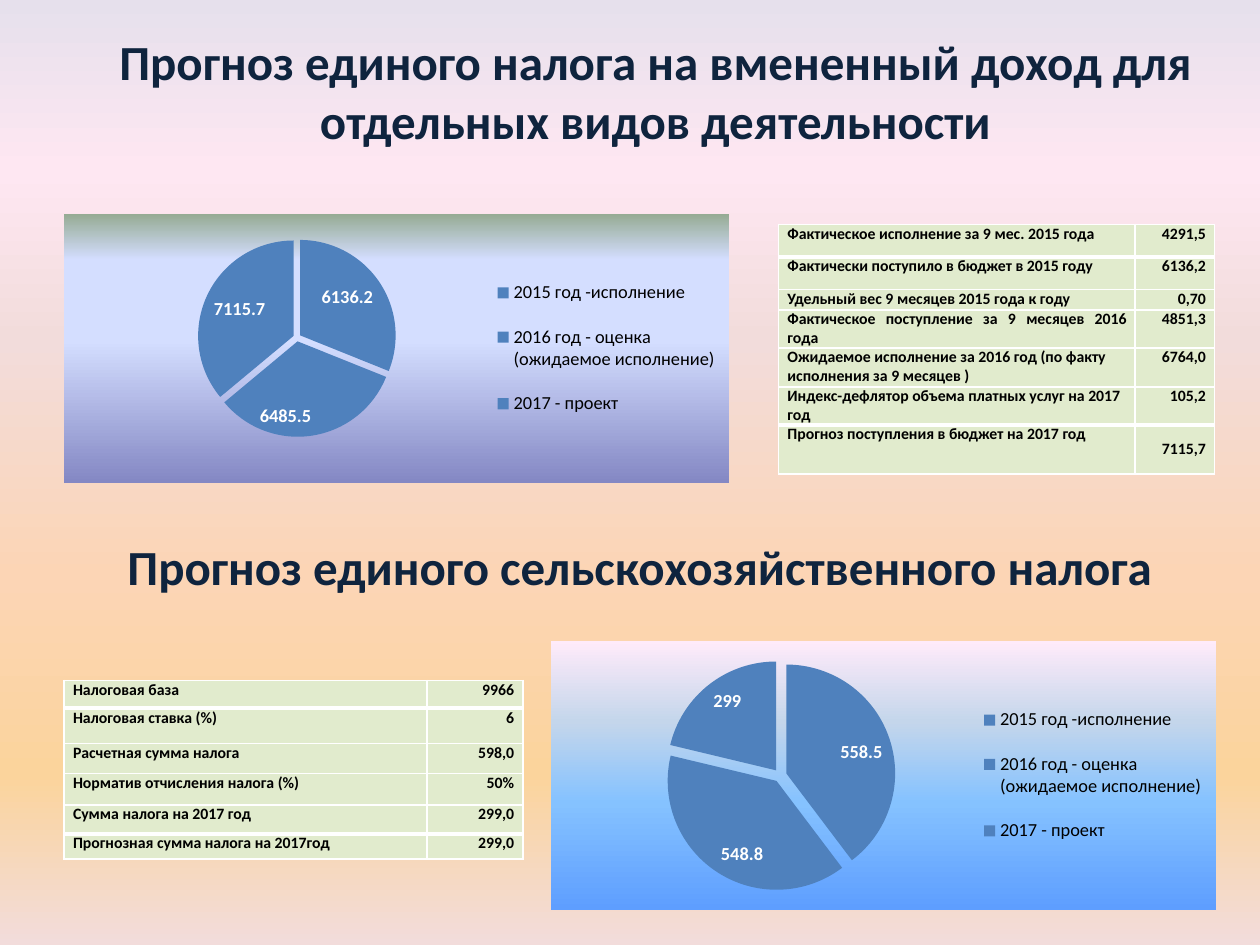
from dataclasses import dataclass

from pptx import Presentation, util as u
from pptx.chart import data
from pptx.dml.color import RGBColor
from pptx.enum import chart as charts, text
from pptx.oxml import ns, parse_xml


@dataclass(frozen=True)
class Theme:
    font: str = "Calibri"
    heading: str = "0F243E"
    ink: str = "000000"
    light: str = "FFFFFF"
    cell: str = "E1EBCD"
    slice: str = "C0504D"
    heading_size: float = 28
    chart_size: float = 10.5
    table_size: float = 9
    thin: float = 1
    thick: float = 3
    background: tuple = ((0, "E6E0EC"), (18, "FEE7F2"), (36, "F2DCDB"),
                         (61, "FCD5B5"), (82, "FBD49C"), (100, "F2DCDB"))
    violet: tuple = ((0, "8488C4"), (53, "D4DEFF"), (83, "D4DEFF"), (100, "96AB94"))
    blue: tuple = ((0, "5E9EFF"), (40, "85C2FF"), (70, "C4D6EB"), (100, "FFEBFA"))


def gradient(stops, angle):
    marks = "".join(f'<a:gs pos="{position * 1000}"><a:srgbClr val="{color}"/></a:gs>'
                    for position, color in stops)
    return (f'<a:gradFill {ns.nsdecls("a")} rotWithShape="1"><a:gsLst>{marks}</a:gsLst>'
            f'<a:lin ang="{angle * 60000}" scaled="0"/></a:gradFill>')


def manual_layout(left, top, width, height, inner=False):
    target = '<c:layoutTarget val="inner"/>' if inner else ""
    sizes = "".join(f'<c:{name} val="{value}"/>' for name, value in
                    zip("xywh", (left, top, width, height)))
    return parse_xml(f'<c:layout {ns.nsdecls("c")}><c:manualLayout>{target}'
                     f'<c:xMode val="edge"/><c:yMode val="edge"/>{sizes}'
                     '</c:manualLayout></c:layout>')


class SlideBuilder:
    """Adds styled elements to the current slide."""

    def __init__(self, slide, theme):
        self.slide = slide
        self.theme = theme

    def style(self, font, size, color, bold=False):
        font.name = self.theme.font
        font.size = u.Pt(size)
        font.bold = bold
        font.color.rgb = RGBColor.from_string(color)

    def background(self):
        self.slide.background.fill.solid()
        solid = next(self.slide._element.iter(ns.qn("a:solidFill")))
        solid.getparent().replace(solid, parse_xml(gradient(self.theme.background, 90)))

    def heading(self, wording, box):
        shape = self.slide.shapes.add_textbox(*map(u.Inches, box))
        frame = shape.text_frame
        frame.word_wrap = True
        frame.vertical_anchor = text.MSO_ANCHOR.MIDDLE
        frame.text = wording
        paragraph = frame.paragraphs[0]
        paragraph.alignment = text.PP_ALIGN.CENTER
        self.style(paragraph.runs[0].font, self.theme.heading_size, self.theme.heading, True)

    def pie(self, values, box, stops, plot, explosion):
        chart_data = data.CategoryChartData()
        chart_data.categories = ["2015 год -исполнение",
                                 "2016 год - оценка (ожидаемое исполнение)",
                                 "2017 - проект"]
        chart_data.add_series("Series 1", values)
        chart = self.slide.shapes.add_chart(charts.XL_CHART_TYPE.PIE,
                                            *map(u.Inches, box), chart_data).chart
        chart.has_title = False
        self.style(chart.font, self.theme.chart_size, self.theme.ink)
        space = chart._chartSpace
        space.find(ns.qn("c:chart")).addnext(parse_xml(
            f'<c:spPr {ns.nsdecls("c", "a")}>{gradient(stops, 270)}'
            '<a:ln><a:noFill/></a:ln></c:spPr>'))

        pie = chart.plots[0]
        pie.vary_by_categories = False
        series = pie.series[0]
        series.format.fill.solid()
        series.format.fill.fore_color.rgb = RGBColor.from_string(self.theme.slice)
        series._element.find(ns.qn("c:spPr")).addnext(
            parse_xml(f'<c:explosion {ns.nsdecls("c")} val="{explosion}"/>'))
        pie.has_data_labels = True
        labels = pie.data_labels
        labels.show_value = True
        labels.show_percentage = False
        labels.position = charts.XL_LABEL_POSITION.INSIDE_END
        self.style(labels.font, self.theme.chart_size, self.theme.light, True)

        chart.has_legend = True
        legend = chart.legend
        legend.position = charts.XL_LEGEND_POSITION.RIGHT
        legend.include_in_layout = False
        self.style(legend.font, self.theme.chart_size, self.theme.ink)
        plot_area = next(space.iter(ns.qn("c:plotArea")))
        for parent in (plot_area, legend._element):
            for old in parent.findall(ns.qn("c:layout")):
                parent.remove(old)
        plot_area.insert(0, manual_layout(*plot, inner=True))
        legend._element.find(ns.qn("c:legendPos")).addnext(
            manual_layout(0.65, 0.17, 0.33, 0.66))

    def borders(self, cell, top, bottom):
        properties = cell._tc.get_or_add_tcPr()
        widths = {"L": self.theme.thin, "R": self.theme.thin, "T": top, "B": bottom}
        for index, (side, width) in enumerate(widths.items()):
            properties.insert(index, parse_xml(
                f'<a:ln{side} {ns.nsdecls("a")} w="{u.Pt(width)}"><a:solidFill>'
                f'<a:srgbClr val="{self.theme.light}"/></a:solidFill></a:ln{side}>'))

    def table(self, rows, heights, widths, corner, justified):
        box = (*corner, sum(widths), sum(heights))
        table = self.slide.shapes.add_table(len(rows), len(widths),
                                            *map(u.Inches, box)).table
        table.first_row = table.horz_banding = False
        for column, width in zip(table.columns, widths):
            column.width = u.Inches(width)
        thick_lines = (1, len(rows) - 1)
        edges = [self.theme.thick if line in thick_lines else self.theme.thin
                 for line in range(len(rows) + 1)]
        for index, (row, height) in enumerate(zip(rows, heights)):
            table.rows[index].height = u.Inches(height)
            label = text.PP_ALIGN.JUSTIFY if index in justified else text.PP_ALIGN.LEFT
            for column, alignment in enumerate((label, text.PP_ALIGN.RIGHT)):
                cell = table.cell(index, column)
                cell.margin_left = cell.margin_right = u.Inches(0.07)
                cell.margin_top = cell.margin_bottom = 0
                cell.fill.solid()
                cell.fill.fore_color.rgb = RGBColor.from_string(self.theme.cell)
                cell.text_frame.text = row[column]
                paragraph = cell.text_frame.paragraphs[0]
                paragraph.alignment = alignment
                self.style(paragraph.runs[0].font, self.theme.table_size,
                           self.theme.ink, True)
                self.borders(cell, edges[index], edges[index + 1])
        return table


def main():
    theme = Theme()
    presentation = Presentation()
    presentation.slide_width, presentation.slide_height = u.Inches(10), u.Inches(7.5)
    builder = SlideBuilder(presentation.slides.add_slide(presentation.slide_layouts[6]), theme)
    builder.background()

    builder.heading("Прогноз единого налога на вмененный доход для отдельных видов деятельности",
                    (0.71, 0.21, 8.98, 1.02))
    builder.pie((6136.2, 6485.5, 7115.7), (0.51, 1.7, 5.28, 2.13), theme.violet,
                (0.2, 0.09, 0.3, 0.74), 4)
    imputed_income = builder.table([
        ("Фактическое исполнение за 9 мес. 2015 года", "4291,5"),
        ("Фактически поступило в бюджет в 2015 году", "6136,2"),
        ("Удельный вес 9 месяцев 2015 года к году", "0,70"),
        ("Фактическое поступление за 9 месяцев 2016 года", "4851,3"),
        ("Ожидаемое исполнение за 2016 год (по факту исполнения за 9 месяцев )", "6764,0"),
        ("Индекс-дефлятор объема платных услуг на 2017 год", "105,2"),
        ("Прогноз поступления в бюджет на 2017 год", "7115,7"),
    ], (0.26, 0.26, 0.16, 0.26, 0.31, 0.26, 0.39), (2.83, 0.63), (6.18, 1.78), (0, 1, 3))
    imputed_income.cell(6, 1).vertical_anchor = text.MSO_ANCHOR.MIDDLE

    builder.heading("Прогноз единого сельскохозяйственного налога", (0.51, 4.22, 9.13, 0.55))
    builder.table([
        ("Налоговая база", "9966"),
        ("Налоговая ставка (%)", "6"),
        ("Расчетная сумма налога", "598,0"),
        ("Норматив отчисления налога (%)", "50%"),
        ("Сумма налога на 2017 год", "299,0"),
        ("Прогнозная сумма налога на 2017год", "299,0"),
    ], (0.22, 0.28, 0.24, 0.25, 0.23, 0.2), (2.88, 0.76), (0.51, 5.4), (0, 1, 2))
    builder.pie((558.5, 548.8, 299), (4.37, 5.09, 5.28, 2.13), theme.blue,
                (0.17, 0.07, 0.35, 0.86), 6)

    presentation.save("out.pptx")


if __name__ == "__main__":
    main()
